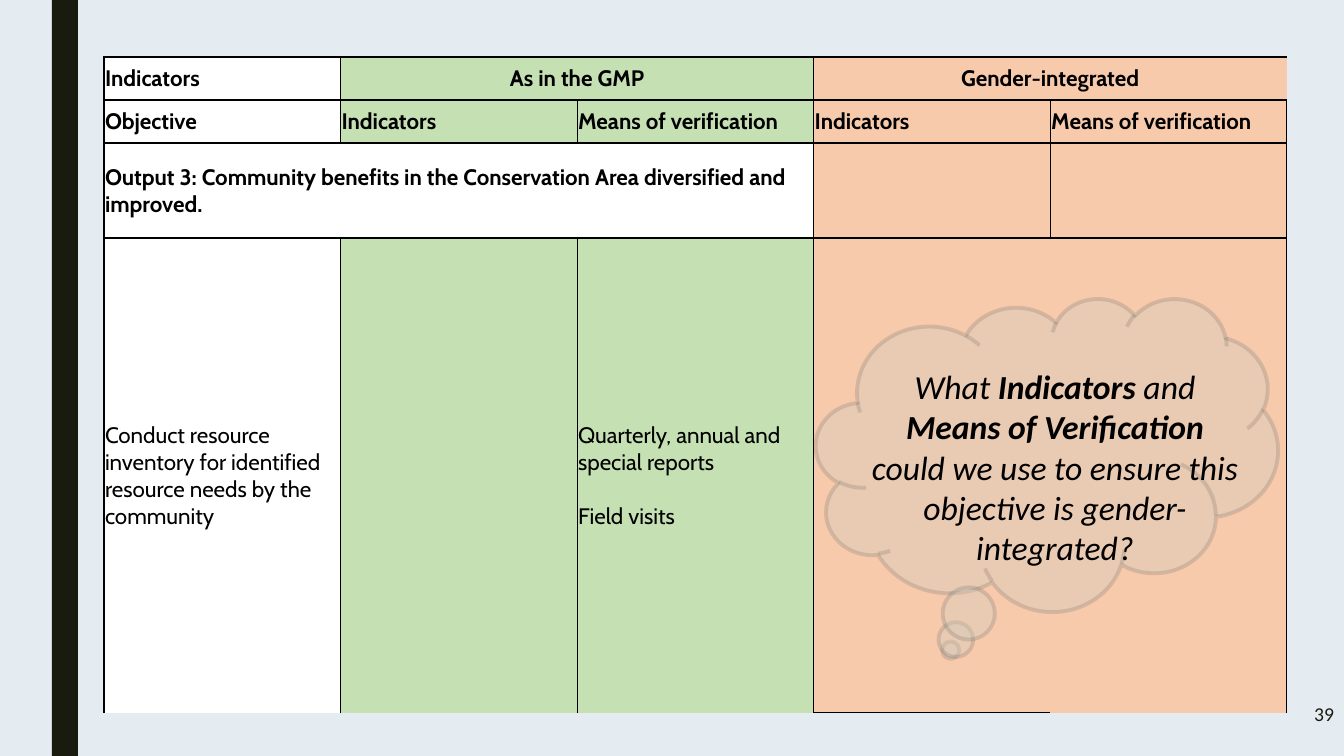
import lxml.etree
import pptx
import pptx.dml.color
import pptx.enum.shapes
import pptx.enum.text
import pptx.oxml.ns
import pptx.util

RGB = pptx.dml.color.RGBColor
SHAPE = pptx.enum.shapes.MSO_SHAPE
ALIGN = pptx.enum.text.PP_ALIGN
MIDDLE = pptx.enum.text.MSO_ANCHOR.MIDDLE
qn = pptx.oxml.ns.qn
Pt = pptx.util.Pt

PALE = RGB(0xE4, 0xEC, 0xF1)
DARK = RGB(0x19, 0x1B, 0x0E)
BLACK = RGB(0, 0, 0)
WHITE = RGB(0xFF, 0xFF, 0xFF)
GREEN = RGB(0xC5, 0xE0, 0xB3)
PEACH = RGB(0xF7, 0xCA, 0xAC)
SAND = RGB(0xD1, 0xCB, 0xBE)
GREY = RGB(0x68, 0x68, 0x63)

PX = 914400 / 100.8


def emu(*sizes):
    return [round(size * PX) for size in sizes]


def write(para, text, color, **form):
    run = para.add_run()
    run.text = text
    run.font.color.rgb = color
    for key, value in form.items():
        setattr(run.font, key, value)


deck = pptx.Presentation()
deck.slide_width, deck.slide_height = emu(1344, 756)
slide = deck.slides.add_slide(deck.slide_layouts[6])
slide.background.fill.solid()
slide.background.fill.fore_color.rgb = PALE

# Side bar
bar = slide.shapes.add_shape(SHAPE.RECTANGLE, *emu(52, 0, 26, 756))
bar.shadow.inherit = False
bar.fill.solid()
bar.fill.fore_color.rgb = DARK
bar.line.fill.background()

# Table grid: cells with the same letter share one outline
AREAS = ["abbcc", "defgh", "iiijk", "lmnpp", "lmnpp", "lmnpp"]
HEIGHTS = [43, 43, 95, 174, 173, 128]
WIDTH = 1183
MERGES = [(0, 1, 0, 2), (0, 3, 0, 4), (2, 0, 2, 2), (3, 0, 5, 0),
          (3, 1, 5, 1), (3, 2, 5, 2), (4, 4, 5, 4)]
SIDES = {"a:lnL": (0, -1), "a:lnR": (0, 1), "a:lnT": (-1, 0), "a:lnB": (1, 0)}
FILLS = [WHITE, GREEN, GREEN, PEACH, PEACH]
WORDS = {
    (0, 0): ["Indicators"],
    (0, 1): ["As in the GMP"],
    (0, 3): ["Gender-integrated"],
    (1, 0): ["Objective"],
    (1, 1): ["Indicators"],
    (1, 2): ["Means of verification"],
    (1, 3): ["Indicators"],
    (1, 4): ["Means of verification"],
    (2, 0): ["Output 3: Community benefits in the Conservation Area "
             "diversified and improved."],
    (3, 0): ["Conduct resource inventory for identified resource needs "
             "by the community"],
    (3, 2): ["Quarterly, annual and special reports", "Field visits"],
}
INSETS = {"margin_left": 1, "margin_right": 1, "margin_top": 1, "margin_bottom": 0}

frame = slide.shapes.add_table(6, 5, *emu(104, 57, WIDTH, sum(HEIGHTS)))
table = frame.table
table.first_row = table.horz_banding = False
for col, column in enumerate(table.columns):
    column.width = emu(WIDTH / 5)[0]
for row, height in enumerate(HEIGHTS):
    table.rows[row].height = emu(height)[0]
for top, left, bottom, right in MERGES:
    table.cell(top, left).merge(table.cell(bottom, right))

for row, areas in enumerate(AREAS):
    for col, area in enumerate(areas):
        cell = table.cell(row, col)
        cell.vertical_anchor = MIDDLE
        for key, size in INSETS.items():
            setattr(cell, key, emu(size)[0])

        # Borders only where the area changes
        props = cell._tc.get_or_add_tcPr()
        for tag, (down, across) in SIDES.items():
            y, x = row + down, col + across
            inside = 0 <= y < 6 and 0 <= x < 5 and AREAS[y][x] == area
            edge = lxml.etree.SubElement(props, qn(tag), w="12700")
            if inside:
                lxml.etree.SubElement(edge, qn("a:noFill"))
            else:
                solid = lxml.etree.SubElement(edge, qn("a:solidFill"))
                lxml.etree.SubElement(solid, qn("a:srgbClr"), val=str(BLACK))
        cell.fill.solid()
        cell.fill.fore_color.rgb = WHITE if area == "i" else FILLS[col]

        # Cell text
        for count, text in enumerate(WORDS.get((row, col), [])):
            body = cell.text_frame
            para = body.add_paragraph() if count else body.paragraphs[0]
            para.alignment = ALIGN.CENTER if area in "bc" else ALIGN.LEFT
            para.space_before = Pt(19.5 if count else 0)
            write(para, text, BLACK, name="Cabin", size=Pt(16), bold=row < 3)

# Thought cloud
cloud = slide.shapes.add_shape(SHAPE.CLOUD_CALLOUT, *emu(816, 298, 462, 313))
cloud.shadow.inherit = False
cloud.line.width = Pt(2.75)
for paint, color, alpha in [(cloud.fill, SAND, 36), (cloud.line.fill, GREY, 22)]:
    paint.solid()
    paint.fore_color.rgb = color
for color, alpha in [(SAND, 36), (GREY, 22)]:
    for node in cloud._element.spPr.iter(qn("a:srgbClr")):
        if node.get("val") == str(color):
            lxml.etree.SubElement(node, qn("a:alpha"), val=str(alpha * 1000))

# Question over the cloud
ask = slide.shapes.add_textbox(*emu(858, 361, 394, 214)).text_frame
ask.word_wrap = True
ask.paragraphs[0].alignment = ALIGN.CENTER
PARTS = ["What ", "Indicators", " and ", "Means of Verification ",
         "could we use to ensure this objective is gender-integrated?"]
for count, text in enumerate(PARTS):
    write(ask.paragraphs[0], text, BLACK, name="Calibri", size=Pt(24),
          italic=True, bold=count % 2 == 1)

# Page number
page = slide.shapes.add_textbox(*emu(1244, 672, 100, 84)).text_frame
page.word_wrap = True
page.vertical_anchor = MIDDLE
page.paragraphs[0].alignment = ALIGN.RIGHT
write(page.paragraphs[0], "39", DARK, name="Calibri", size=Pt(14))

deck.save("out.pptx")
